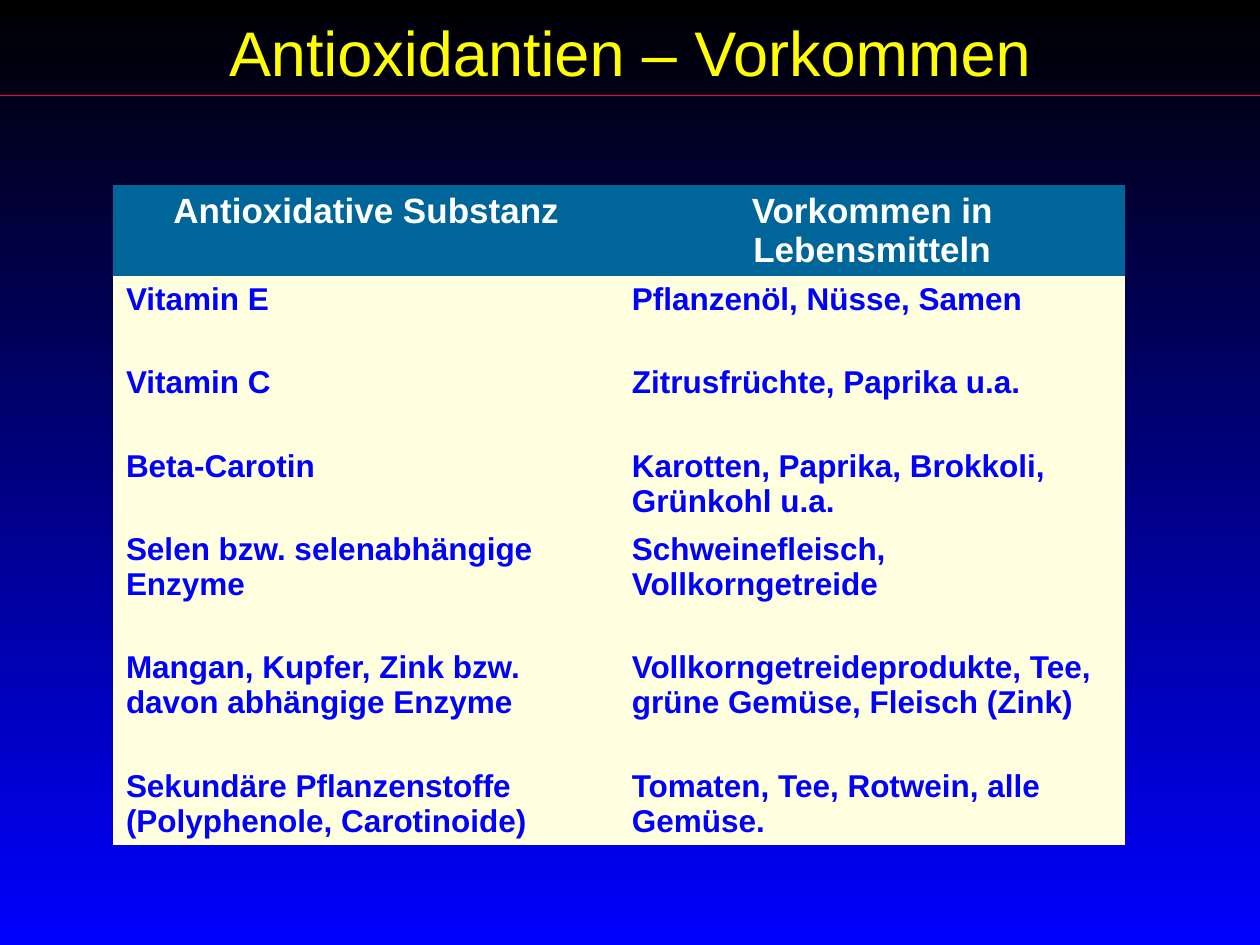
from pptx import Presentation
from pptx.dml.color import RGBColor
from pptx.enum.shapes import MSO_CONNECTOR
from pptx.enum.text import MSO_ANCHOR, PP_ALIGN
from pptx.oxml.ns import qn
from pptx.util import Inches, Pt
from lxml.etree import SubElement

COLORS = {
    "night": "000000",
    "blue": "0000FF",
    "title": "FFFF00",
    "rule": "FF0033",
    "header": "006699",
    "header_text": "FFFFFF",
    "body": "FFFFE0",
}

TITLE_FONT = {"name": "Arial", "size": Pt(36), "bold": False}
HEADER_FONT = {"name": "Arial", "size": Pt(20), "bold": True}
BODY_FONT = {"name": "Arial", "size": Pt(18), "bold": True}

SOURCES = [
    ("Antioxidative Substanz", "Vorkommen in Lebensmitteln"),
    ("Vitamin E", "Pflanzenöl, Nüsse, Samen"),
    ("Vitamin C", "Zitrusfrüchte, Paprika u.a."),
    ("Beta-Carotin", "Karotten, Paprika, Brokkoli, Grünkohl u.a."),
    ("Selen bzw. selenabhängige Enzyme", "Schweinefleisch, Vollkorngetreide"),
    ("Mangan, Kupfer, Zink bzw. davon abhängige Enzyme",
     "Vollkorngetreideprodukte, Tee, grüne Gemüse, Fleisch (Zink)"),
    ("Sekundäre Pflanzenstoffe (Polyphenole, Carotinoide)",
     "Tomaten, Tee, Rotwein, alle Gemüse."),
]
ROW_HEIGHTS = [0.72, 0.66, 0.66, 0.66, 0.94, 0.94, 0.66]


def rgb(name):
    return RGBColor.from_string(COLORS[name])


def write(frame, text, font_values, color, align):
    paragraph = frame.paragraphs[0]
    paragraph.alignment = align
    run = paragraph.add_run()
    run.text = text
    for attribute, value in font_values.items():
        setattr(run.font, attribute, value)
    run.font.color.rgb = rgb(color)


def paint_background(slide):
    fill = slide.background.fill
    fill.gradient()
    fill.gradient_angle = 270
    for stop, color, position in zip(fill.gradient_stops, ("night", "blue"), (0, 1)):
        stop.color.rgb = rgb(color)
        stop.position = position


def place_title(slide, left, top, width, height):
    title = slide.shapes.title
    box = {"left": left, "top": top, "width": width, "height": height}
    for attribute, value in box.items():
        setattr(title, attribute, Inches(value))
    title.text_frame.vertical_anchor = MSO_ANCHOR.MIDDLE
    write(title.text_frame, "Antioxidantien – Vorkommen", TITLE_FONT, "title", PP_ALIGN.CENTER)


def place_rule(slide, left, top, width):
    rule = slide.shapes.add_connector(
        MSO_CONNECTOR.STRAIGHT, Inches(left), Inches(top), Inches(left + width), Inches(top))
    rule.line.color.rgb = rgb("rule")
    rule.line.width = Pt(0.75)
    SubElement(rule._element.spPr, qn("a:effectLst"))


def place_sources(slide, left, top, width):
    table = slide.shapes.add_table(
        len(SOURCES), len(SOURCES[0]), Inches(left), Inches(top),
        Inches(width), Inches(sum(ROW_HEIGHTS))).table
    table.horz_banding = False
    for row, height in zip(table.rows, ROW_HEIGHTS):
        row.height = Inches(height)
    for row_index, entries in enumerate(SOURCES):
        if row_index == 0:
            fill, style = "header", (HEADER_FONT, "header_text", PP_ALIGN.CENTER)
        else:
            fill, style = "body", (BODY_FONT, "blue", PP_ALIGN.LEFT)
        for column_index, text in enumerate(entries):
            cell = table.cell(row_index, column_index)
            cell.fill.solid()
            cell.fill.fore_color.rgb = rgb(fill)
            write(cell.text_frame, text, *style)
            for side in ("a:lnL", "a:lnR", "a:lnT", "a:lnB"):
                border = cell._tc.tcPr.makeelement(qn(side), {"w": "0"})
                SubElement(border, qn("a:noFill"))
                cell._tc.tcPr.find(qn("a:solidFill")).addprevious(border)


def main():
    presentation = Presentation()
    presentation.slide_width = Inches(10)
    presentation.slide_height = Inches(7.5)
    slide = presentation.slides.add_slide(presentation.slide_layouts[5])
    paint_background(slide)
    place_title(slide, 0, 0.03, 10, 0.75)
    place_rule(slide, 0, 0.76, 10)
    place_sources(slide, 0.9, 1.47, 8.03)
    presentation.save("out.pptx")


if __name__ == "__main__":
    main()
